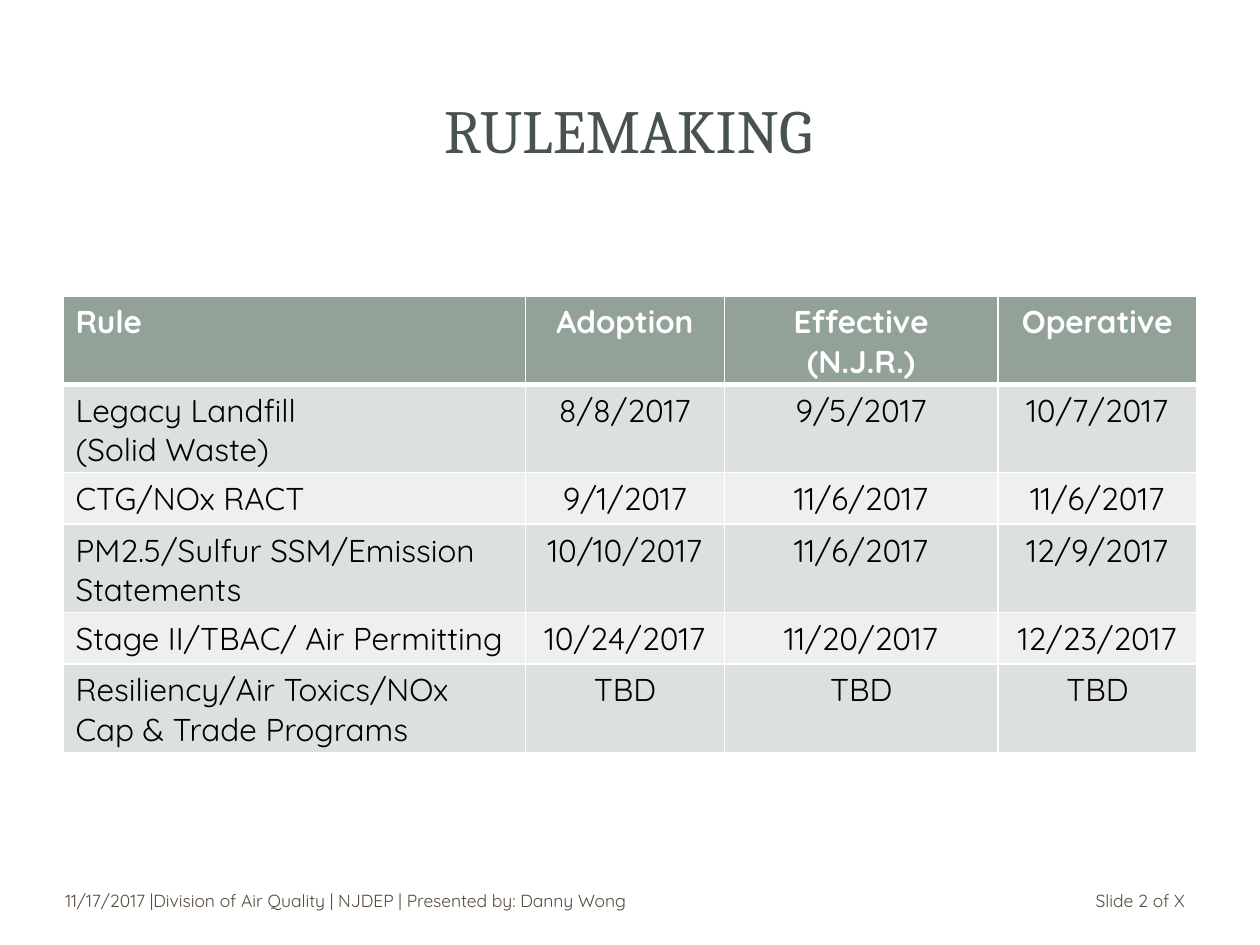
from lxml import etree
from pptx import Presentation
from pptx.dml.color import RGBColor
from pptx.enum import shapes, text
from pptx.oxml.ns import qn
from pptx.util import Inches, Pt

# Content
TITLE = "RULEMAKING"
HEADER = ["Rule", "Adoption", "Effective (N.J.R.)", "Operative"]
RULES = [
    ["Legacy Landfill\n(Solid Waste)", "8/8/2017", "9/5/2017", "10/7/2017"],
    ["CTG/NOx RACT", "9/1/2017", "11/6/2017", "11/6/2017"],
    ["PM2.5/Sulfur SSM/Emission Statements", "10/10/2017", "11/6/2017", "12/9/2017"],
    ["Stage II/TBAC/ Air Permitting", "10/24/2017", "11/20/2017", "12/23/2017"],
    ["Resiliency/Air Toxics/NOx Cap & Trade Programs", "TBD", "TBD", "TBD"],
]
FOOTERS = [  # wording, left, width, alignment
    ("Slide 2 of X", 7.17, 2.33, text.PP_ALIGN.RIGHT),
    ("11/17/2017 |Division of Air Quality | NJDEP | Presented by: Danny Wong",
     0.42, 6.42, text.PP_ALIGN.LEFT),
]
PANELS = [  # preset, left, top, width, height, opacity in percent
    (shapes.MSO_SHAPE.ROUNDED_RECTANGLE, 0.1, 0.11, 9.8, 7.29, 100),
    (shapes.MSO_SHAPE.RECTANGLE, 0.3, 0.3, 9.4, 1.45, 83),
    (shapes.MSO_SHAPE.RECTANGLE, 0.41, 0.41, 9.17, 1.22, 100),
]
COLUMNS = [3.67, 1.58, 2.17, 1.58]
ROW_HEIGHT = 0.41
COLORS = {"title": "47534C", "footer": "564B3C", "header": "93A299", "odd": "DCE0DE",
          "even": "EEF0EF", "white": "FFFFFF", "black": "000000"}
BODY_FONT = "Quicksand"


def rgb(name):
    return RGBColor.from_string(COLORS[name])


def write(tf, wording, font, size, color, align, bold=False):
    for i, line in enumerate(wording.split("\n")):
        p = tf.add_paragraph() if i else tf.paragraphs[0]
        p.alignment = align
        r = p.add_run()
        r.text = line
        r.font.name, r.font.size, r.font.bold = font, Pt(size), bold
        r.font.color.rgb = rgb(color)


def add_borders(cell, widths):
    tcPr = cell._tc.get_or_add_tcPr()
    for i, (side, width) in enumerate(widths.items()):
        ln = etree.Element(qn(f"a:ln{side}"), w=str(Pt(width)))
        fill = etree.SubElement(ln, qn("a:solidFill"))
        etree.SubElement(fill, qn("a:srgbClr"), val=COLORS["white"])
        tcPr.insert(i, ln)


prs = Presentation()
prs.slide_width, prs.slide_height = Inches(10), Inches(7.5)
s = prs.slides.add_slide(prs.slide_layouts[5])
title = s.shapes.title

# Background panel and title frame
for preset, left, top, width, height, opacity in PANELS:
    sp = s.shapes.add_shape(preset, Inches(left), Inches(top), Inches(width), Inches(height))
    sp.shadow.inherit = False
    sp.fill.solid()
    sp.fill.fore_color.rgb = rgb("white")
    sp.line.fill.background()
    if preset == shapes.MSO_SHAPE.ROUNDED_RECTANGLE:
        sp.adjustments[0] = 0.02
    if opacity < 100:
        color = sp.fill._xPr.find(".//" + qn("a:srgbClr"))
        etree.SubElement(color, qn("a:alpha"), val=str(opacity * 1000))
    title._element.addprevious(sp._element)

# Title
title.left, title.top = Inches(0.47), Inches(0.45)
title.width, title.height = Inches(9.03), Inches(1.14)
title.text_frame.vertical_anchor = text.MSO_ANCHOR.MIDDLE
write(title.text_frame, TITLE, "Cambria", 35, "title", text.PP_ALIGN.CENTER)

# Footer line
for wording, left, width, align in FOOTERS:
    tf = s.shapes.add_textbox(Inches(left), Inches(6.95), Inches(width), Inches(0.4)).text_frame
    tf.word_wrap = True
    tf.vertical_anchor = text.MSO_ANCHOR.MIDDLE
    write(tf, wording, BODY_FONT, 10, "footer", align)

# Table of rules
rows = [HEADER] + RULES
table = s.shapes.add_table(len(rows), len(COLUMNS), Inches(0.5), Inches(2.35),
                           Inches(sum(COLUMNS)), Inches(ROW_HEIGHT * len(rows))).table
for column, width in zip(table.columns, COLUMNS):
    column.width = Inches(width)
for i, row in enumerate(rows):
    table.rows[i].height = Inches(ROW_HEIGHT)
    is_header = i == 0
    fill = "header" if is_header else "odd" if i % 2 else "even"
    for j, wording in enumerate(row):
        cell = table.cell(i, j)
        cell.fill.solid()
        cell.fill.fore_color.rgb = rgb(fill)
        add_borders(cell, {"L": 1, "R": 1, "T": 3 if i == 1 else 1, "B": 3 if is_header else 1})
        write(cell.text_frame, wording, BODY_FONT, 18, "white" if is_header else "black",
              text.PP_ALIGN.CENTER if j else text.PP_ALIGN.LEFT, is_header)

prs.save("out.pptx")
